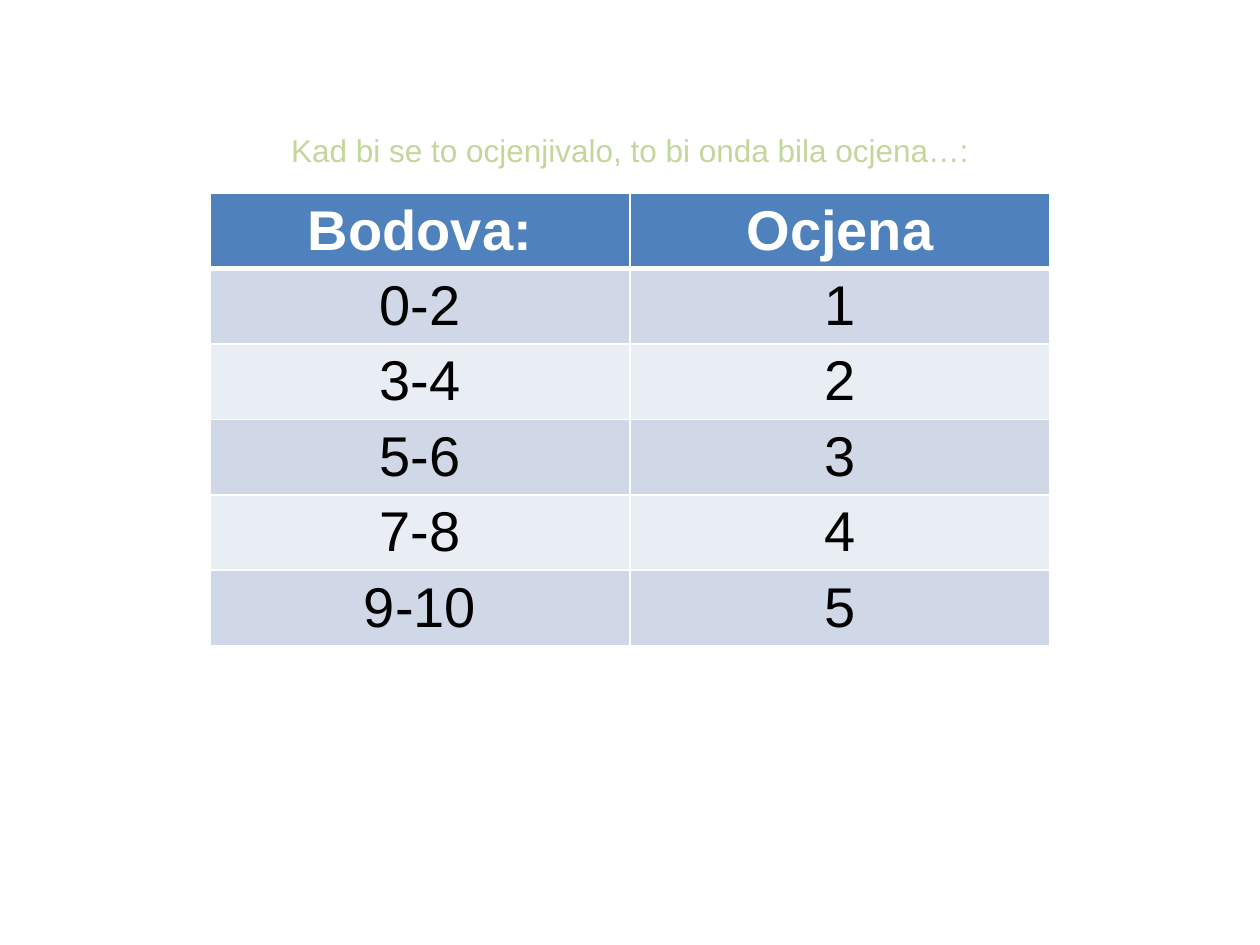
import pptx
import pptx.dml.color
import pptx.enum.text
import pptx.oxml
import pptx.oxml.ns
import pptx.util
from pptx.util import Cm

RGBColor = pptx.dml.color.RGBColor
WHITE = RGBColor(0xFF, 0xFF, 0xFF)
BLACK = RGBColor(0x00, 0x00, 0x00)
GREEN = RGBColor(0xC3, 0xD6, 0x9B)
HEADER_BLUE = RGBColor(0x4F, 0x81, 0xBD)
BAND_DARK = RGBColor(0xD0, 0xD8, 0xE8)
BAND_LIGHT = RGBColor(0xE9, 0xED, 0xF4)

GRADES = [
    ("Bodova:", "Ocjena"),
    ("0-2", "1"),
    ("3-4", "2"),
    ("5-6", "3"),
    ("7-8", "4"),
    ("9-10", "5"),
]


def write_text(text_frame, text, *, size, color, bold=False):
    """Write one centred paragraph."""
    paragraph = text_frame.paragraphs[0]
    paragraph.alignment = pptx.enum.text.PP_ALIGN.CENTER
    run = paragraph.add_run()
    run.text = text
    run.font.name = "Arial"
    run.font.size = pptx.util.Pt(size)
    run.font.bold = bold
    run.font.color.rgb = color


def set_borders(cell, widths):
    """Draw white cell borders; widths maps each side to points."""
    properties = cell._tc.get_or_add_tcPr()
    for index, side in enumerate(("L", "R", "T", "B")):
        line = pptx.oxml.parse_xml(
            f'<a:ln{side} {pptx.oxml.ns.nsdecls("a")} w="{pptx.util.Pt(widths[side])}">'
            f'<a:solidFill><a:srgbClr val="{WHITE}"/></a:solidFill></a:ln{side}>'
        )
        properties.insert(index, line)


def add_caption(slide, left, top, width, height):
    text_box = slide.shapes.add_textbox(left, top, width, height)
    text_box.text_frame.word_wrap = True
    write_text(text_box.text_frame, "Kad bi se to ocjenjivalo, to bi onda bila ocjena…:",
               size=18, color=GREEN)


def add_grade_table(slide, left, top, width, height):
    table = slide.shapes.add_table(len(GRADES), 2, left, top, width, height).table
    for row_index, values in enumerate(GRADES):
        header = row_index == 0
        if header:
            fill = HEADER_BLUE
        else:
            fill = BAND_DARK if row_index % 2 else BAND_LIGHT
        # The rule under the header is heavier than the others
        widths = {"L": 1, "R": 1, "T": 3 if row_index == 1 else 1, "B": 3 if header else 1}
        for column_index, value in enumerate(values):
            cell = table.cell(row_index, column_index)
            cell.fill.solid()
            cell.fill.fore_color.rgb = fill
            set_borders(cell, widths)
            write_text(cell.text_frame, value, size=32,
                       color=WHITE if header else BLACK, bold=header)


def main():
    presentation = pptx.Presentation()
    presentation.slide_width = Cm(25.4)
    presentation.slide_height = Cm(19.05)
    slide = presentation.slides.add_slide(presentation.slide_layouts[6])

    # Table and caption share one centred column
    width = Cm(16.93)
    left = (presentation.slide_width - width) // 2
    add_grade_table(slide, left, Cm(3.89), width, Cm(9.1))
    add_caption(slide, left, Cm(2.52), width, Cm(1.02))

    presentation.save("out.pptx")


if __name__ == "__main__":
    main()
